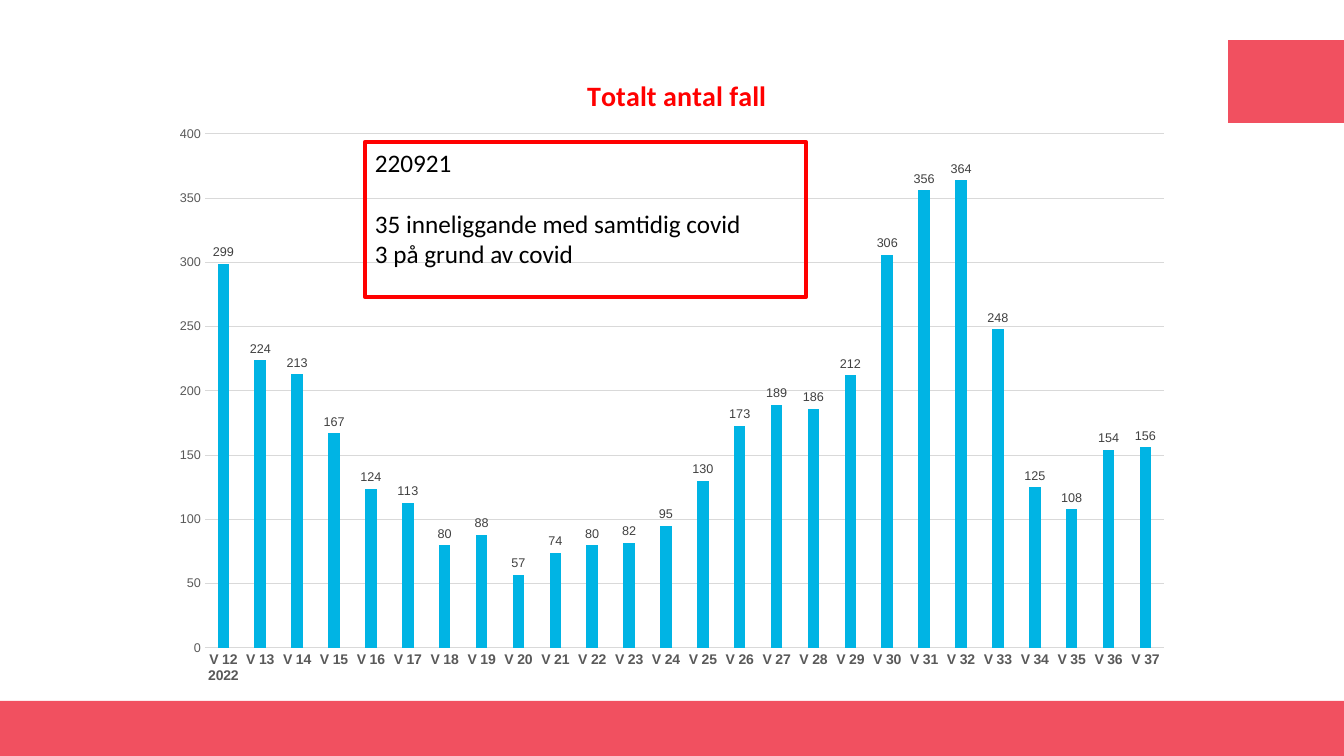
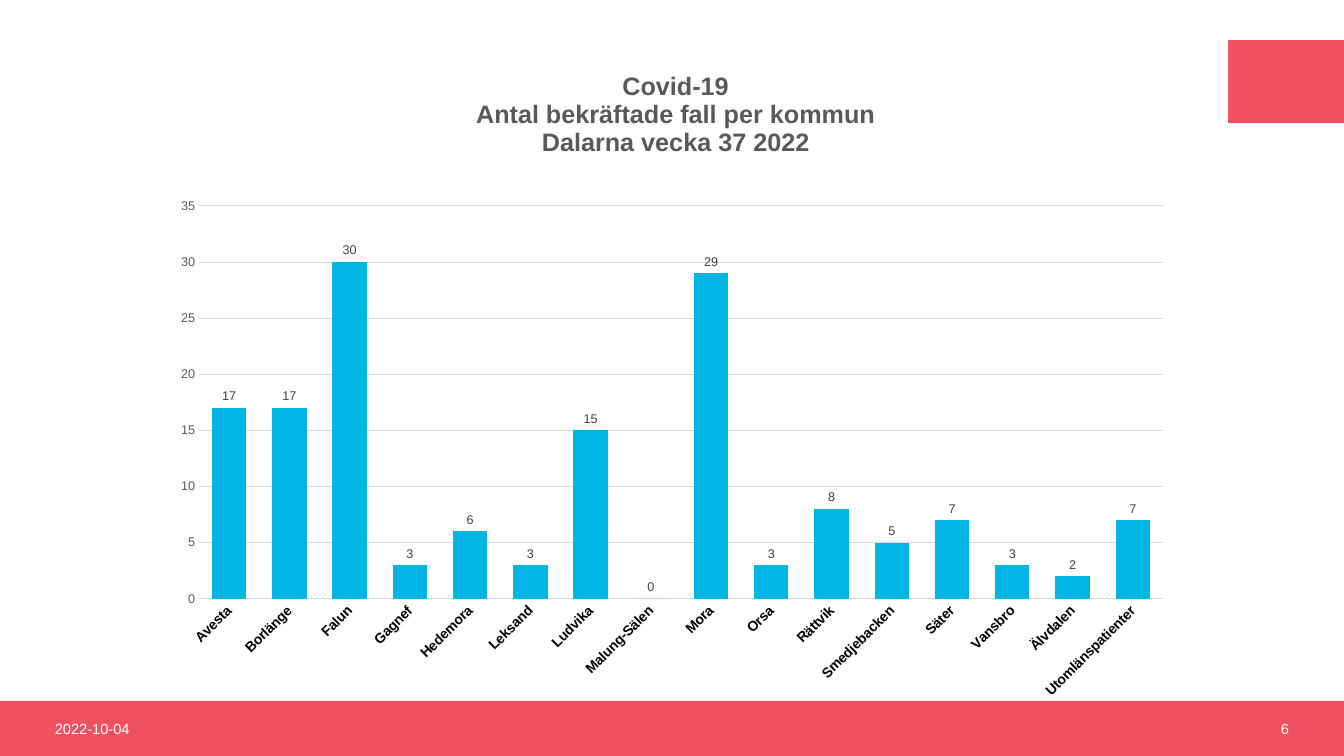
from lxml import etree
from pptx import Presentation
from pptx.chart.data import CategoryChartData
from pptx.dml.color import RGBColor
from pptx.enum.chart import XL_CHART_TYPE, XL_LABEL_POSITION, XL_TICK_MARK
from pptx.enum.shapes import MSO_SHAPE
from pptx.enum.text import MSO_ANCHOR, PP_ALIGN
from pptx.oxml.ns import qn
from pptx.util import Emu, Pt

RECTANGLE = MSO_SHAPE.RECTANGLE
COLUMNS = XL_CHART_TYPE.COLUMN_CLUSTERED
OUTSIDE_END = XL_LABEL_POSITION.OUTSIDE_END
NO_TICK = XL_TICK_MARK.NONE
TOP, MIDDLE = MSO_ANCHOR.TOP, MSO_ANCHOR.MIDDLE
LEFT, RIGHT = PP_ALIGN.LEFT, PP_ALIGN.RIGHT

CORAL = RGBColor(0xF1, 0x50, 0x60)
CYAN = RGBColor(0x00, 0xB4, 0xE4)
RED = RGBColor(0xFF, 0x00, 0x00)
BLACK = RGBColor(0x00, 0x00, 0x00)
WHITE = RGBColor(0xFF, 0xFF, 0xFF)
DARK_GREY = RGBColor(0x40, 0x40, 0x40)
GREY = RGBColor(0x59, 0x59, 0x59)
LIGHT_GREY = RGBColor(0xD9, 0xD9, 0xD9)

PX = 914400 / 100.8
PAGE_WIDTH, PAGE_HEIGHT = 1344, 756
BAND = (0, 701, PAGE_WIDTH, 55)
CORNER = (1228, 40, 116, 83)
CHART_BOX = (160, 43, 1024, 669)
NOTE_BOX = (365, 142, 441, 155)
FOOTER_MARGIN, FOOTER_WIDTH = 45, 302

WEEKS = ["V 12 2022"] + [f"V {week}" for week in range(13, 38)]
WEEK_CASES = [299, 224, 213, 167, 124, 113, 80, 88, 57, 74, 80, 82, 95,
              130, 173, 189, 186, 212, 306, 356, 364, 248, 125, 108, 154, 156]
TOWN_CASES = {
    "Avesta": 17, "Borlänge": 17, "Falun": 30, "Gagnef": 3,
    "Hedemora": 6, "Leksand": 3, "Ludvika": 15, "Malung-Sälen": 0,
    "Mora": 29, "Orsa": 3, "Rättvik": 8, "Smedjebacken": 5,
    "Säter": 7, "Vansbro": 3, "Älvdalen": 2, "Utomlänspatienter": 7,
}


def emu(box):
    return [Emu(round(length * PX)) for length in box]


def style_font(font, size, color, name="Arial", bold=False):
    font.size = Pt(size)
    font.name = name
    font.bold = bold
    font.color.rgb = color


def add_block(page, box):
    block = page.shapes.add_shape(RECTANGLE, *emu(box))
    block.shadow.inherit = False
    block.fill.solid()
    block.fill.fore_color.rgb = CORAL
    block.line.fill.background()


def add_page(deck):
    page = deck.slides.add_slide(deck.slide_layouts[6])
    add_block(page, BAND)
    add_block(page, CORNER)
    return page


def add_footer(page, band, date, number):
    left, top, width, height = band
    right_start = left + width - FOOTER_MARGIN - FOOTER_WIDTH
    for start, text, align in ((left + FOOTER_MARGIN, date, LEFT),
                               (right_start, number, RIGHT)):
        box = page.shapes.add_textbox(*emu((start, top, FOOTER_WIDTH, height)))
        frame = box.text_frame
        frame.word_wrap = True
        frame.vertical_anchor = MIDDLE
        frame.text = text
        para = frame.paragraphs[0]
        para.alignment = align
        style_font(para.runs[0].font, 10.5, WHITE)


def set_layout(parent, position, settings):
    for old in parent.findall(qn("c:layout")):
        parent.remove(old)
    layout = etree.Element(qn("c:layout"))
    manual = etree.SubElement(layout, qn("c:manualLayout"))
    for tag, value in settings.items():
        etree.SubElement(manual, qn(f"c:{tag}")).set("val", str(value))
    parent.insert(position, layout)


def place_parts(chart, box, title_at, plot_box):
    left, top, width, height = box
    title_x, title_y = title_at
    plot_x, plot_y, plot_width, plot_height = plot_box
    edges = {"xMode": "edge", "yMode": "edge"}
    space = chart._chartSpace
    set_layout(space.xpath("c:chart/c:title")[0], 1, {
        **edges,
        "x": round((title_x - left) / width, 4),
        "y": round((title_y - top) / height, 4)})
    set_layout(space.xpath("c:chart/c:plotArea")[0], 0, {
        "layoutTarget": "inner", **edges,
        "x": round((plot_x - left) / width, 4),
        "y": round((plot_y - top) / height, 4),
        "w": round(plot_width / width, 4),
        "h": round(plot_height / height, 4)})


def style_axes(chart, top_value, step, label_color, rotation):
    categories, values = chart.category_axis, chart.value_axis
    for axis, size, color, bold in ((categories, 10, label_color, True),
                                    (values, 9, GREY, False)):
        axis.major_tick_mark = axis.minor_tick_mark = NO_TICK
        style_font(axis.tick_labels.font, size, color, bold=bold)
    body = categories._element.xpath("c:txPr/a:bodyPr")[0]
    body.set("rot", str(rotation * 60000))
    body.set("vert", "horz")
    values.minimum_scale, values.maximum_scale = 0, top_value
    values.major_unit = step
    values.has_major_gridlines = True
    values.format.line.fill.background()
    for line in (categories.format.line, values.major_gridlines.format.line):
        line.color.rgb = LIGHT_GREY
        line.width = Pt(0.75)


def add_column_chart(page, box, labels, cases, gap):
    data = CategoryChartData()
    data.categories = labels
    data.add_series("Antal fall", cases)
    chart = page.shapes.add_chart(COLUMNS, *emu(box), data).chart
    style_font(chart.font, 10, BLACK)
    chart.has_legend = False
    plot = chart.plots[0]
    plot.gap_width = gap
    plot.overlap = -27
    plot.vary_by_categories = False
    fill = plot.series[0].format.fill
    fill.solid()
    fill.fore_color.rgb = CYAN
    plot.has_data_labels = True
    plot.data_labels.show_value = True
    plot.data_labels.position = OUTSIDE_END
    style_font(plot.data_labels.font, 9, DARK_GREY)
    return chart


def set_title(chart, text, size, color, name):
    chart.has_title = True
    frame = chart.chart_title.text_frame
    frame.text = text
    for para in frame.paragraphs:
        for span in para.runs:
            style_font(span.font, size, color, name, bold=True)


def add_note(page, box, lines):
    note = page.shapes.add_shape(RECTANGLE, *emu(box))
    note.shadow.inherit = False
    note.fill.background()
    note.line.color.rgb = RED
    note.line.width = Pt(3)
    frame = note.text_frame
    frame.word_wrap = True
    frame.vertical_anchor = TOP
    frame.text = "\n".join(lines)
    for para in frame.paragraphs:
        para.alignment = LEFT
        style_font(para.runs[0].font, 18, BLACK, "Calibri")
    frame.paragraphs[1].space_before = Pt(22)


def build_weeks_page(deck):
    page = add_page(deck)
    chart = add_column_chart(page, CHART_BOX, WEEKS, WEEK_CASES, 219)
    set_title(chart, "Totalt antal fall", 20, RED, "Calibri")
    style_axes(chart, 400, 50, GREY, 0)
    place_parts(chart, CHART_BOX, (582, 71), (205, 134, 959, 514))
    add_note(page, NOTE_BOX, ["220921", "35 inneliggande med samtidig covid",
                              "3 på grund av covid"])


def build_towns_page(deck):
    page = add_page(deck)
    add_footer(page, BAND, "2022-10-04", "6")
    chart = add_column_chart(page, CHART_BOX, list(TOWN_CASES),
                             list(TOWN_CASES.values()), 75)
    set_title(chart, "Covid-19\nAntal bekräftade fall per kommun\n"
              "Dalarna vecka 37 2022", 18, GREY, "Arial")
    style_axes(chart, 35, 5, BLACK, -45)
    place_parts(chart, CHART_BOX, (473, 67), (199, 206, 964, 393))


def main():
    deck = Presentation()
    deck.slide_width, deck.slide_height = emu((PAGE_WIDTH, PAGE_HEIGHT))
    build_weeks_page(deck)
    build_towns_page(deck)
    deck.save("out.pptx")


if __name__ == "__main__":
    main()
